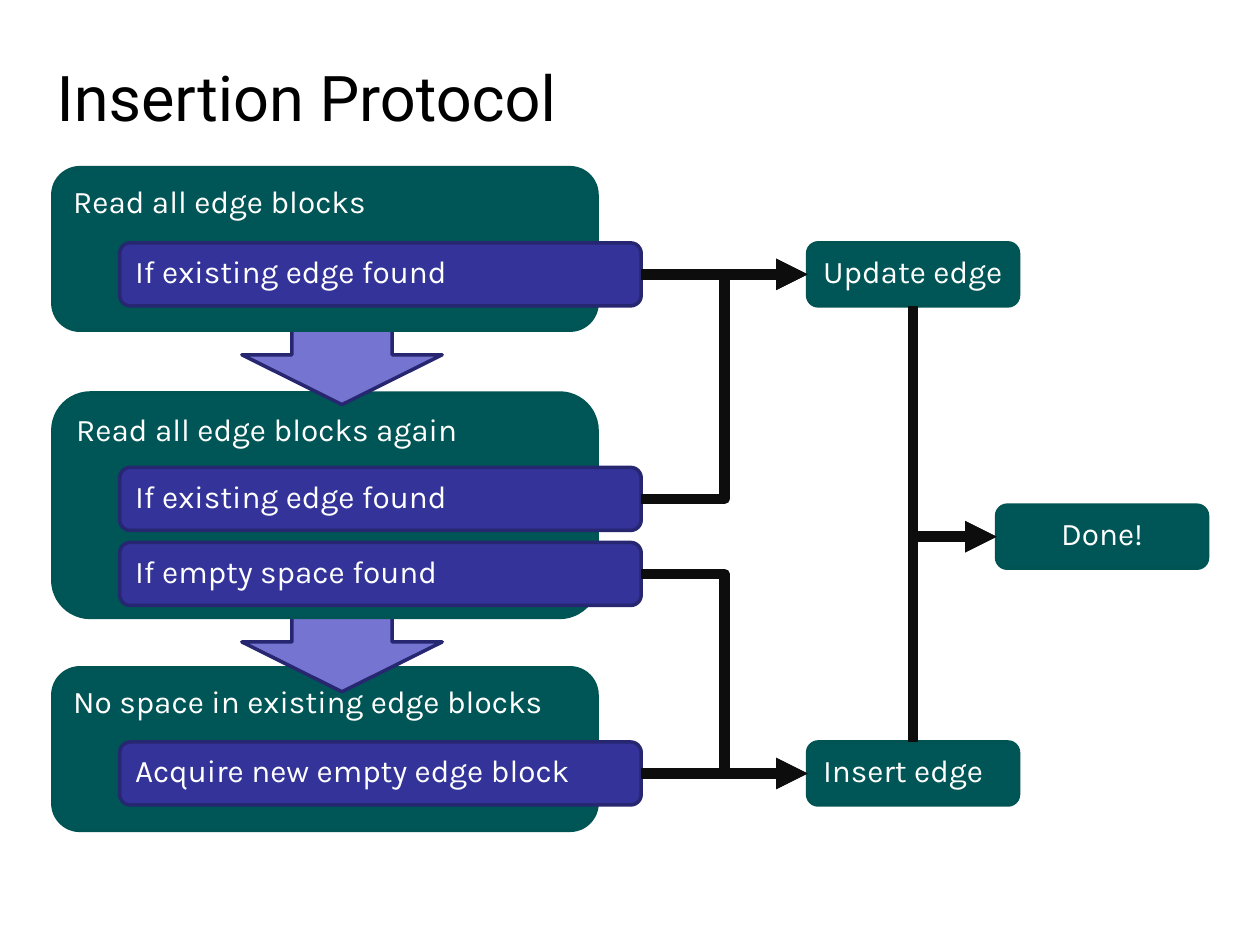
from lxml.etree import SubElement
from pptx import Presentation
from pptx.dml.color import RGBColor
from pptx.enum.shapes import MSO_CONNECTOR, MSO_SHAPE
from pptx.enum.text import MSO_ANCHOR, MSO_AUTO_SIZE, PP_ALIGN
from pptx.oxml.ns import qn
from pptx.util import Pt

TITLE = "Insertion Protocol"
# Phases from top to bottom: text, top, height, steps as (key, text, top)
PHASES = [
    ("Read all edge blocks", 95.8, 92.9,
     [("found", "If existing edge found", 138.8)]),
    ("Read all edge blocks again", 224.6, 128.2,
     [("found again", "If existing edge found", 267.1),
      ("space", "If empty space found", 310)]),
    ("No space in existing edge blocks", 381.6, 92.9,
     [("acquire", "Acquire new empty edge block", 424)]),
]
# Outcomes: key, text, left, top, alignment
OUTCOMES = [
    ("update", "Update edge", 461.5, 138.8, PP_ALIGN.LEFT),
    ("insert", "Insert edge", 461.5, 424, PP_ALIGN.LEFT),
    ("done", "Done!", 569.5, 288.7, PP_ALIGN.CENTER),
]
LINKS = [("found", "update"), ("found again", "update"),
         ("space", "insert"), ("acquire", "insert")]

THEME = {
    "title_font": "Roboto", "title_size": 36, "title_color": "000000",
    "body_font": "Karla", "body_size": 18, "body_color": "FFFFFF",
    "green": ("005656", "005454"),
    "blue": ("333399", "262671"),
    "lilac": ("7575D1", "262671"),
    "link": "0D0D0D", "outline": 2, "link_width": 6,
}
PANEL_LEFT, PANEL_WIDTH = 30.2, 311
STEP_LEFT, STEP_WIDTH = 68.4, 298
BOX_HEIGHT, OUTCOME_WIDTH = 36, 120.5
ARROW_LEFT, ARROW_WIDTH, ARROW_HEIGHT = 138.2, 114.5, 56.9
ARROW_OVERLAP = 14.4
LEFT_SITE, RIGHT_SITE = 1, 3


def add_run(paragraph, text, role):
    run = paragraph.add_run()
    run.text = text
    run.font.name = THEME[role + "_font"]
    run.font.size = Pt(THEME[role + "_size"])
    run.font.color.rgb = RGBColor.from_string(THEME[role + "_color"])


def add_block(slide, kind, frame, colors):
    shape = slide.shapes.add_shape(kind, *map(Pt, frame))
    shape.shadow.inherit = False
    fill, line = map(RGBColor.from_string, THEME[colors])
    shape.fill.solid()
    shape.fill.fore_color.rgb = fill
    shape.line.color.rgb = line
    shape.line.width = Pt(THEME["outline"])
    return shape


def add_box(slide, text, frame, colors, alignment=PP_ALIGN.LEFT):
    shape = add_block(slide, MSO_SHAPE.ROUNDED_RECTANGLE, frame, colors)
    shape.text_frame.word_wrap = True
    shape.text_frame.vertical_anchor = MSO_ANCHOR.TOP
    paragraph = shape.text_frame.paragraphs[0]
    paragraph.alignment = alignment
    add_run(paragraph, text, "body")
    return shape


def add_link(slide, kind, begin=(0, 0), end=(0, 0)):
    connector = slide.shapes.add_connector(kind, *(round(v) for v in begin + end))
    connector.line.color.rgb = RGBColor.from_string(THEME["link"])
    connector.line.width = Pt(THEME["link_width"])
    properties = connector.element.spPr
    line = properties.find(qn("a:ln"))
    SubElement(line, qn("a:round"))
    SubElement(line, qn("a:tailEnd"), type="triangle")
    SubElement(properties, qn("a:effectLst"))
    return connector


def link_side_to_side(slide, source, target):
    level = source.top == target.top
    kind = MSO_CONNECTOR.STRAIGHT if level else MSO_CONNECTOR.ELBOW
    connector = add_link(slide, kind)
    connector.begin_connect(source, RIGHT_SITE)
    connector.end_connect(target, LEFT_SITE)


def link_one_bend(slide, source, target):
    """Run vertically from source, then turn right into target.

    The one-bend preset starts horizontally, so it is laid out on its side
    around the centre of the route and turned by a quarter.
    """
    downward = source.top < target.top
    start_x = source.left + source.width / 2
    start_y = source.top + (source.height if downward else 0)
    end_x, end_y = target.left, target.top + target.height / 2
    center_x, center_y = (start_x + end_x) / 2, (start_y + end_y) / 2
    half_rise = abs(end_y - start_y) / 2
    half_run = (end_x - start_x) / 2 * (1 if downward else -1)
    connector = add_link(slide, MSO_CONNECTOR.ELBOW,
                         (center_x + half_rise, center_y - half_run),
                         (center_x - half_rise, center_y + half_run))
    properties = connector.element.spPr
    properties.find(qn("a:prstGeom")).set("prst", "bentConnector2")
    quarter_turns = 3 if downward else 1
    properties.find(qn("a:xfrm")).set("rot", str(quarter_turns * 90 * 60000))


def add_title(slide):
    title = slide.shapes.title
    title.left, title.top, title.width, title.height = map(Pt, (25.2, 25.2, 648, 59.8))
    title.text_frame.auto_size = MSO_AUTO_SIZE.NONE
    title.text_frame.vertical_anchor = MSO_ANCHOR.MIDDLE
    paragraph = title.text_frame.paragraphs[0]
    paragraph.alignment = PP_ALIGN.LEFT
    add_run(paragraph, TITLE, "title")


def main():
    presentation = Presentation()
    presentation.slide_width, presentation.slide_height = Pt(720), Pt(540)
    slide = presentation.slides.add_slide(presentation.slide_layouts[5])
    add_title(slide)

    boxes = {}
    # Bottom phase first: each panel hides the upper end of the arrow below it
    for phase in reversed(PHASES):
        text, top, height, steps = phase
        if phase is not PHASES[-1]:
            arrow_top = top + height - ARROW_OVERLAP
            add_block(slide, MSO_SHAPE.DOWN_ARROW,
                      (ARROW_LEFT, arrow_top, ARROW_WIDTH, ARROW_HEIGHT), "lilac")
        add_box(slide, text, (PANEL_LEFT, top, PANEL_WIDTH, height), "green")
        for key, step_text, step_top in steps:
            frame = (STEP_LEFT, step_top, STEP_WIDTH, BOX_HEIGHT)
            boxes[key] = add_box(slide, step_text, frame, "blue")
    for key, text, left, top, alignment in OUTCOMES:
        frame = (left, top, OUTCOME_WIDTH, BOX_HEIGHT)
        boxes[key] = add_box(slide, text, frame, "green", alignment)

    for source, target in LINKS:
        link_side_to_side(slide, boxes[source], boxes[target])
    for source in ("update", "insert"):
        link_one_bend(slide, boxes[source], boxes["done"])
    presentation.save("out.pptx")


if __name__ == "__main__":
    main()
